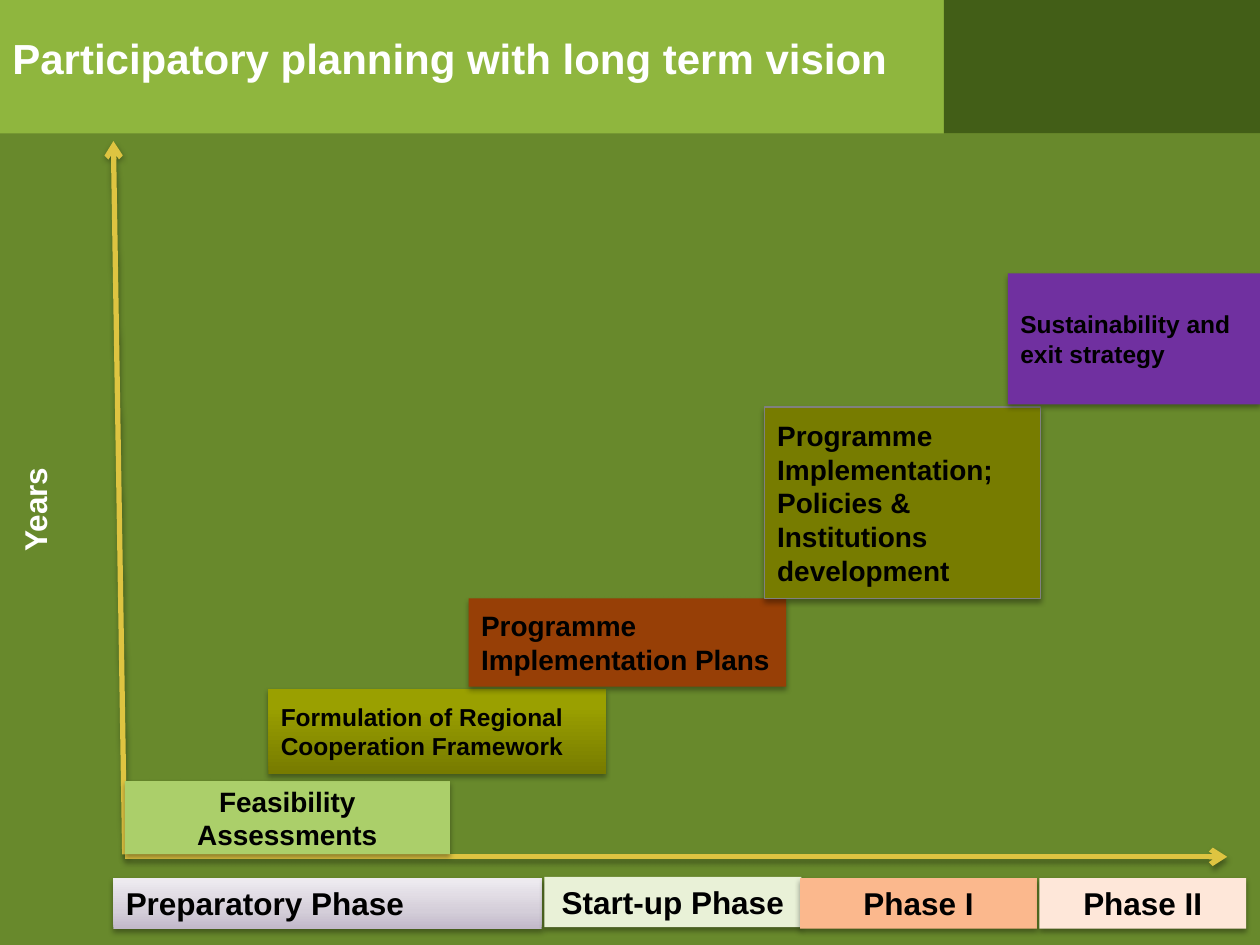
"""Build a slide of planning steps that rise over the phases of a programme."""
from dataclasses import dataclass
from copy import deepcopy
from typing import Optional

from pptx import Presentation, oxml, util as u
from pptx.dml.color import RGBColor
from pptx.enum import shapes, text
from pptx.oxml.ns import nsdecls, qn

BLACK = RGBColor(0x00, 0x00, 0x00)
WHITE = RGBColor(0xFF, 0xFF, 0xFF)
MOSS = RGBColor(0x68, 0x89, 0x2C)
LEAF = RGBColor(0x8F, 0xB6, 0x3E)
PINE = RGBColor(0x42, 0x5E, 0x17)
GOLD = RGBColor(0xDE, 0xC4, 0x41)
LIME = RGBColor(0xAB, 0xCF, 0x6A)
RUST = RGBColor(0x97, 0x3F, 0x06)
OLIVE = RGBColor(0x77, 0x7C, 0x00)
PLUM = RGBColor(0x70, 0x30, 0xA0)
GREY = RGBColor(0x80, 0x80, 0x80)
CREAM = RGBColor(0xE9, 0xF1, 0xD7)
PEACH = RGBColor(0xFB, 0xB8, 0x8D)
BLUSH = RGBColor(0xFE, 0xE7, 0xD9)
MOSSY = ((0, RGBColor(0x77, 0x7B, 0x00)), (0.8, RGBColor(0x9A, 0xA0, 0x00)),
         (1, RGBColor(0x9B, 0xA1, 0x00)))
LILAC = ((0, RGBColor(0xC2, 0xB9, 0xCA)), (0.35, RGBColor(0xD4, 0xCE, 0xD9)),
         (1, RGBColor(0xEF, 0xEC, 0xF1)))

COLS, ROWS = 100, 75
WIDE, HIGH = u.Inches(10), u.Inches(7.5)
LEFT, MID = text.PP_ALIGN.LEFT, text.PP_ALIGN.CENTER
TOP, CORE = text.MSO_ANCHOR.TOP, text.MSO_ANCHOR.MIDDLE


@dataclass(frozen=True)
class Area:
    """A place on the grid, in columns and rows."""
    col: float
    row: float
    cols: float
    rows: float

    def box(self) -> tuple:
        """Return left, top, width and height in slide units."""
        return (*spot(self.col, self.row), *spot(self.cols, self.rows))


@dataclass(frozen=True)
class Block:
    """A filled box with a label."""
    label: str
    area: Area
    fill: object
    size: int
    align: object = LEFT
    anchor: object = CORE
    edge: Optional[RGBColor] = None


STEPS = (
    Block("Feasibility Assessments", Area(9.9, 62, 25.8, 5.8), LIME, 16, MID),
    Block("Formulation of Regional Cooperation Framework",
          Area(21.3, 54.7, 26.8, 6.7), MOSSY, 14),
    Block("Programme Implementation Plans", Area(37.2, 47.5, 25.2, 7), RUST, 16),
    Block("Programme Implementation; Policies & Institutions development",
          Area(60.7, 32.3, 21.9, 15.2), OLIVE, 16, edge=GREY),
    Block("Sustainability and exit strategy", Area(80, 21.7, 20, 10.4), PLUM, 14),
)
PHASES = (
    Block("Preparatory Phase", Area(9, 69.7, 34, 4), LILAC, 18, LEFT, TOP),
    Block("Start-up Phase", Area(43.2, 69.6, 20.4, 4), CREAM, 18, MID, TOP),
    Block("Phase I", Area(63.5, 69.7, 18.8, 4), PEACH, 18, MID, TOP),
    Block("Phase II", Area(82.5, 69.7, 16.4, 4), BLUSH, 18, MID, TOP),
)
AXES = (((9.9, 67.8), (9, 11.2)), ((9.9, 68), (97.4, 68)))


def spot(col: float, row: float) -> tuple:
    """Turn a column and a row into slide units."""
    return round(WIDE * col / COLS), round(HIGH * row / ROWS)


def write(shape, words: str, *, size: int, ink=BLACK, align=LEFT, anchor=TOP) -> None:
    """Set bold text in a shape."""
    frame = shape.text_frame
    frame.word_wrap = True
    frame.vertical_anchor = anchor
    para = frame.paragraphs[0]
    para.alignment = align
    run = para.add_run()
    run.text = words
    font = run.font
    font.name, font.size, font.bold = "Arial", u.Pt(size), True
    font.color.rgb = ink


def shade(props) -> None:
    """Give shape properties a soft shadow that falls straight down."""
    for old in props.findall(qn("a:effectLst")):
        props.remove(old)
    props.append(oxml.parse_xml(
        f'<a:effectLst {nsdecls("a")}><a:outerShdw blurRad="{u.Pt(3.1)}" '
        f'dist="{u.Pt(1.8)}" dir="5400000" rotWithShape="0"><a:srgbClr val="000000">'
        '<a:alpha val="35000"/></a:srgbClr></a:outerShdw></a:effectLst>'))


def blend(shape, stops: tuple) -> None:
    """Fill a shape with colour stops that run from bottom to top."""
    shape.fill.gradient()
    shape.fill.gradient_angle = 90
    group = shape.element.spPr.find(".//" + qn("a:gsLst"))
    while len(group) < len(stops):
        group.append(deepcopy(group[0]))
    for stop, (place, tint) in zip(shape.fill.gradient_stops, stops):
        stop.position = place
        stop.color.rgb = tint


def panel(slide, area: Area, fill, edge: Optional[RGBColor] = None):
    """Draw a flat rectangle."""
    shape = slide.shapes.add_shape(shapes.MSO_SHAPE.RECTANGLE, *area.box())
    if isinstance(fill, RGBColor):
        shape.fill.solid()
        shape.fill.fore_color.rgb = fill
    else:
        blend(shape, fill)
    if edge is None:
        shape.line.fill.background()
    else:
        shape.line.color.rgb = edge
        shape.line.width = u.Pt(0.75)
    shape.shadow.inherit = False
    return shape


def block(slide, item: Block) -> None:
    """Draw a labelled box with its shadow."""
    shape = panel(slide, item.area, item.fill, item.edge)
    shade(shape.element.spPr)
    write(shape, item.label, size=item.size, align=item.align, anchor=item.anchor)


def axis(slide, start: tuple, end: tuple) -> None:
    """Draw an arrow between two grid points."""
    line = slide.shapes.add_connector(
        shapes.MSO_CONNECTOR.STRAIGHT, *spot(*start), *spot(*end))
    line.line.color.rgb = GOLD
    line.line.width = u.Pt(3)
    props = line.element.spPr
    props.find(qn("a:ln")).append(
        oxml.parse_xml(f'<a:tailEnd {nsdecls("a")} type="arrow"/>'))
    shade(props)


def note(slide, words: str, area: Area, size: int, turn: float = 0) -> None:
    """Add white text without a box."""
    shape = slide.shapes.add_textbox(*area.box())
    shape.rotation = turn
    write(shape, words, size=size, ink=WHITE)


def main() -> None:
    """Build and save the slide."""
    deck = Presentation()
    deck.slide_width, deck.slide_height = WIDE, HIGH
    slide = deck.slides.add_slide(deck.slide_layouts[6])
    slide.background.fill.solid()
    slide.background.fill.fore_color.rgb = MOSS
    panel(slide, Area(0, 0, 100, 10.6), LEAF)
    panel(slide, Area(74.9, 0, 25.1, 10.6), PINE)
    for start, end in AXES:
        axis(slide, start, end)
    for item in STEPS + PHASES:
        block(slide, item)
    note(slide, "Years", Area(-4.4, 35.6, 14.3, 4), 18, 270)
    note(slide, "Participatory planning with long term vision",
         Area(0, 2.1, 79.4, 5), 24)
    deck.save("out.pptx")


if __name__ == "__main__":
    main()
